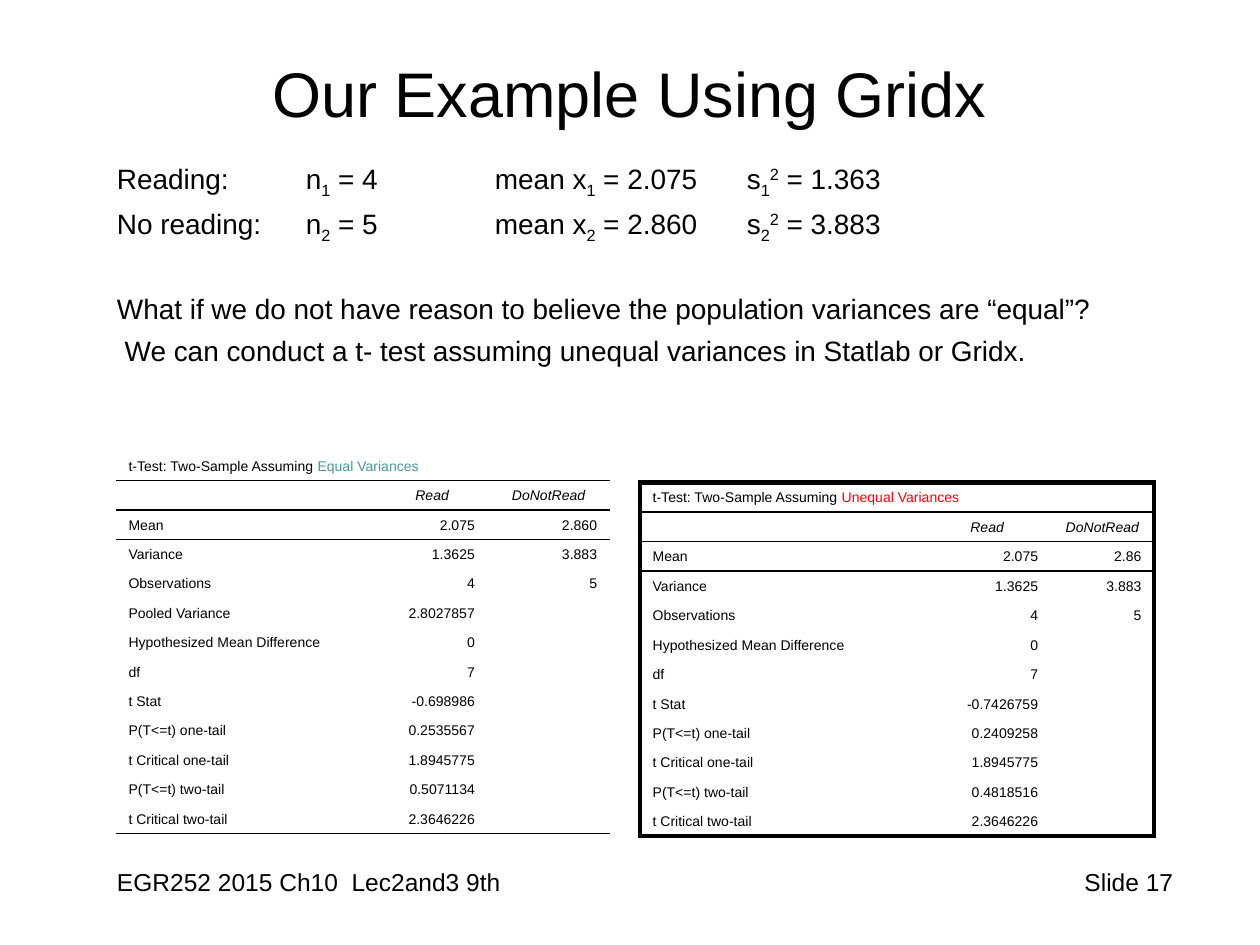
from lxml.etree import SubElement as Sub, Element as Elem
from pptx import Presentation
from pptx.dml.color import RGBColor
from pptx.enum.text import MSO_ANCHOR as Anchor, PP_ALIGN as Align
from pptx.oxml.ns import qn
from pptx.util import Inches, Pt

rgb = RGBColor.from_string
BLACK = "000000"
PLAIN = "{2D5ABB26-0587-4C30-8999-92F81FD0307C}"  # no style, no grid


def write(par, text, size, color=BLACK, base=0, **fmt):
    """Add a run; base is the sub- or superscript shift in percent."""
    run = par.add_run()
    run.text = text
    look = {"name": "Arial", "size": Pt(size), **fmt}
    for key, val in look.items():
        setattr(run.font, key, val)
    run.font.color.rgb = rgb(color)
    if base:
        run.font._element.set("baseline", str(base * 1000))


def rule(cell, widths):
    """Draw cell borders; widths maps L, R, T, B to points."""
    props = cell._tc.get_or_add_tcPr()
    sides = [side for side in "LRTB" if side in widths]
    for spot, side in enumerate(sides):
        line = Elem(qn("a:ln" + side), w=str(Pt(widths[side])))
        fill = Sub(line, qn("a:solidFill"))
        Sub(fill, qn("a:srgbClr"), val=BLACK)
        props.insert(spot, line)


deck = Presentation()
deck.slide_width, deck.slide_height = Inches(10), Inches(7.5)
slide = deck.slides.add_slide(deck.slide_layouts[6])

# Footer, slide number and title
lines = [
    ("EGR252 2015 Ch10  Lec2and3 9th", (0.83, 6.83, 4.75, 0.42), 14, Align.LEFT, Anchor.TOP),
    (" Slide 17", (7.33, 6.83, 2.08, 0.42), 14, Align.RIGHT, Anchor.TOP),
    ("Our Example Using Gridx", (0.83, 0.3, 8.33, 0.87), 36, Align.CENTER, Anchor.MIDDLE),
]
for text, box, size, align, anchor in lines:
    frame = slide.shapes.add_textbox(*map(Inches, box)).text_frame
    frame.word_wrap = True
    frame.vertical_anchor = anchor
    par = frame.paragraphs[0]
    par.alignment = align
    write(par, text, size)

# Body: sample figures, then the question and its answer
body = slide.shapes.add_textbox(*map(Inches, (0.83, 1.23, 8.58, 5.6))).text_frame
body.word_wrap = True
groups = [
    ("Reading:\t\tn", "1", "4", "2.075", "1.363"),
    ("No reading:\tn", "2", "5", "2.860", "3.883"),
]
paras = [
    (4, [(head, 0), (num, -25), (f" = {count}\t\tmean x", 0), (num, -25),
         (f" = {mean}\ts", 0), (num, -25), ("2", 30), (f" = {var}", 0)])
    for head, num, count, mean, var in groups
]
paras += [
    (27, [("What if we do not have reason to believe the population "
           "variances are “equal”?", 0)]),
    (4.4, [(" We can conduct a t- test assuming unequal variances in "
            "Statlab or Gridx.", 0)]),
]
for spot, (gap, runs) in enumerate(paras):
    par = body.add_paragraph() if spot else body.paragraphs[0]
    par.space_before = Pt(gap)
    for text, base in runs:
        write(par, text, 16, base=base)

# Test results: label, Read value, DoNotRead value
equal = [
    ("Mean", "2.075", "2.860"),
    ("Variance", "1.3625", "3.883"),
    ("Observations", "4", "5"),
    ("Pooled Variance", "2.8027857", ""),
    ("Hypothesized Mean Difference", "0", ""),
    ("df", "7", ""),
    ("t Stat", "-0.698986", ""),
    ("P(T<=t) one-tail", "0.2535567", ""),
    ("t Critical one-tail", "1.8945775", ""),
    ("P(T<=t) two-tail", "0.5071134", ""),
    ("t Critical two-tail", "2.3646226", ""),
]
news = {
    "Mean": ("2.075", "2.86"),
    "t Stat": ("-0.7426759", ""),
    "P(T<=t) one-tail": ("0.2409258", ""),
    "P(T<=t) two-tail": ("0.4818516", ""),
}
unequal = [(row[0], *news.get(row[0], row[1:]))
           for row in equal if row[0] != "Pooled Variance"]

# Tables: name, colour, place, column widths, data, frame width
tables = [
    ("Equal Variances", "4597A0", (0.92, 3.58, 3.92, 3.04), (2.07, 0.88, 0.97), equal, 0),
    ("Unequal Variances", "FF0000", (5.08, 3.83, 4.08, 2.81), (2.25, 1.01, 0.82), unequal, 3),
]
for name, tint, box, cols, data, edge in tables:
    rows = [("", "", ""), ("", "Read", "DoNotRead"), *data]
    last = len(rows) - 1
    grid = slide.shapes.add_table(len(rows), 3, *map(Inches, box)).table
    grid.first_row = grid.horz_banding = False
    grid._tbl.tblPr.find(qn("a:tableStyleId")).text = PLAIN
    for col, width in zip(grid.columns, cols):
        col.width = Inches(width)
    grid.cell(0, 0).merge(grid.cell(0, 1))

    for r, row in enumerate(rows):
        for c, text in enumerate(row):
            cell = grid.cell(r, c)
            cell.fill.background()
            cell.vertical_anchor = Anchor.BOTTOM
            par = cell.text_frame.paragraphs[0]
            if (r, c) == (0, 0):
                write(par, "t-Test: Two-Sample Assuming ", 8)
                write(par, name, 8, tint)
            elif text:
                write(par, text, 8, italic=r == 1)
                if c:
                    par.alignment = Align.CENTER if r == 1 else Align.RIGHT
            else:
                # keeps empty cells from stretching the row
                Sub(par._p, qn("a:endParaRPr"), sz="800")

            # Header rules, closing rule and outer frame
            widths = {}
            if r in (1, 2):
                widths["T"] = 1
            if r in (0, 1, last):
                widths["B"] = edge if edge and r == last else 1
            if edge:
                if r == 0:
                    widths["T"] = edge
                if c != 1:
                    widths["R" if c else "L"] = edge
            rule(cell, widths)

deck.save("out.pptx")
